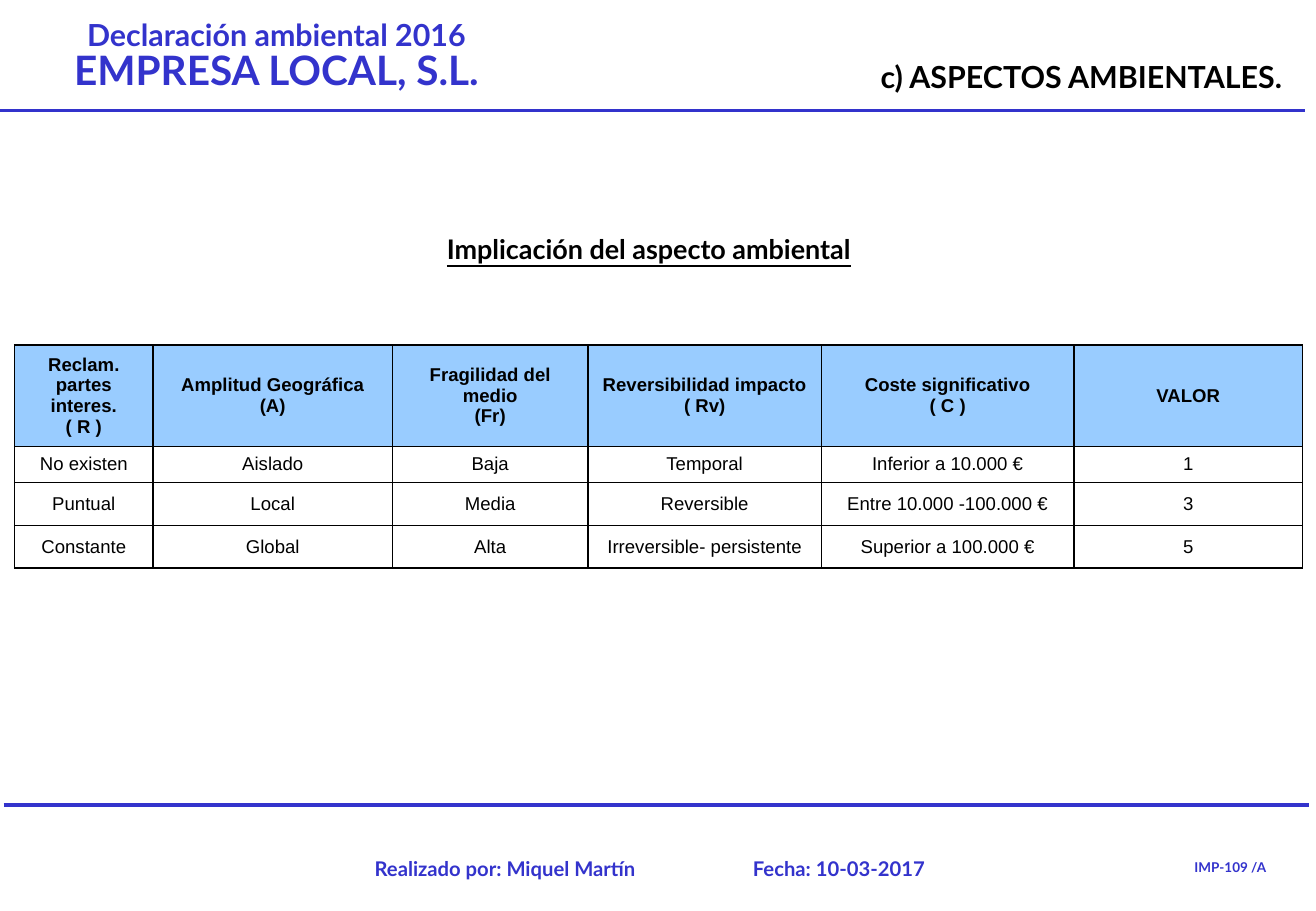
from dataclasses import dataclass

import lxml.etree
import pptx
import pptx.dml.color
import pptx.enum.shapes
import pptx.enum.text
import pptx.oxml.ns
import pptx.util

ALIGN = pptx.enum.text.PP_ALIGN
ANCHOR = pptx.enum.text.MSO_ANCHOR
EMU_PER_PX = 9144  # 100 px to the inch

BLUE = "3333CC"
BLACK = "000000"
WHITE = "FFFFFF"
HEADER_FILL = "99CCFF"


@dataclass(frozen=True)
class Line:
    text: str
    size: int


@dataclass(frozen=True)
class Label:
    left: int
    top: int
    width: int
    height: int
    lines: tuple[Line, ...]
    align: ALIGN
    color: str = BLUE
    underline: bool = False
    anchor: ANCHOR = ANCHOR.TOP
    line_spacing: float = 1.0


@dataclass(frozen=True)
class Rule:
    left: int
    top: int
    width: int


RULES = (Rule(0, 91, 1074), Rule(3, 663, 1074))

LABELS = (
    Label(8, 13, 439, 70,
          (Line("Declaración ambiental 2016", 18), Line("EMPRESA LOCAL, S.L.", 24)),
          ALIGN.CENTER, line_spacing=0.85),
    Label(283, 700, 250, 25, (Line("Realizado por: Miquel Martín", 12),), ALIGN.RIGHT),
    Label(592, 700, 179, 25, (Line("Fecha: 10-03-2017", 12),), ALIGN.RIGHT),
    Label(950, 702, 125, 25, (Line("IMP-109 /A", 8),), ALIGN.CENTER),
    Label(481, 43, 584, 40, (Line("c) ASPECTOS AMBIENTALES.", 18),), ALIGN.RIGHT, BLACK),
    Label(337, 186, 394, 37, (Line("Implicación del aspecto ambiental", 16),),
          ALIGN.CENTER, BLACK, underline=True, anchor=ANCHOR.MIDDLE),
)

TABLE_LEFT, TABLE_TOP = 12, 284
COLUMN_WIDTHS = (114, 197, 161, 192, 208, 188)
ROW_HEIGHTS = (83, 30, 35, 35)
TABLE_ROWS = (
    ("Reclam. partes interes.\n( R )", "Amplitud Geográfica\n(A)", "Fragilidad del medio\n(Fr)",
     "Reversibilidad impacto\n( Rv)", "Coste significativo\n( C )", "VALOR"),
    ("No existen", "Aislado", "Baja", "Temporal", "Inferior a 10.000 €", "1"),
    ("Puntual", "Local", "Media", "Reversible", "Entre 10.000 -100.000 €", "3"),
    ("Constante", "Global", "Alta", "Irreversible- persistente", "Superior a 100.000 €", "5"),
)


def px(length: int) -> pptx.util.Emu:
    return pptx.util.Emu(length * EMU_PER_PX)


def rgb(color: str) -> pptx.dml.color.RGBColor:
    return pptx.dml.color.RGBColor.from_string(color)


def add_child(parent, tag: str, **attributes: str):
    return lxml.etree.SubElement(parent, pptx.oxml.ns.qn(tag), attributes)


def set_font(para, name: str, size: int, color: str, bold: bool) -> None:
    para.font.name = name
    para.font.size = pptx.util.Pt(size)
    para.font.bold = bold
    para.font.color.rgb = rgb(color)


def draw_rule(page, rule: Rule) -> None:
    connector = page.shapes.add_connector(
        pptx.enum.shapes.MSO_CONNECTOR.STRAIGHT,
        px(rule.left), px(rule.top), px(rule.left + rule.width), px(rule.top))
    connector.line.color.rgb = rgb(BLUE)
    connector.line.width = pptx.util.Pt(2.25)
    add_child(connector.element.spPr, "a:effectLst")


def draw_label(page, label: Label) -> None:
    box = page.shapes.add_textbox(
        px(label.left), px(label.top), px(label.width), px(label.height))
    frame = box.text_frame
    frame.word_wrap = True
    frame.vertical_anchor = label.anchor
    for index, line in enumerate(label.lines):
        para = frame.add_paragraph() if index else frame.paragraphs[0]
        para.text = line.text
        para.alignment = label.align
        para.line_spacing = label.line_spacing
        set_font(para, "Lato", line.size, label.color, bold=True)
        para.font.underline = label.underline


def add_borders(cell) -> None:
    """Draw a 1 pt black line on all four sides; call before setting the fill."""
    properties = cell._tc.get_or_add_tcPr()
    for side in ("a:lnL", "a:lnR", "a:lnT", "a:lnB"):
        border = add_child(properties, side, w=str(pptx.util.Pt(1)))
        add_child(add_child(border, "a:solidFill"), "a:srgbClr", val=BLACK)


def draw_cell(cell, text: str, is_header: bool) -> None:
    add_borders(cell)
    cell.fill.solid()
    cell.fill.fore_color.rgb = rgb(HEADER_FILL if is_header else WHITE)
    cell.vertical_anchor = ANCHOR.MIDDLE
    para = cell.text_frame.paragraphs[0]
    para.text = text
    para.alignment = ALIGN.CENTER
    set_font(para, "Arial", 11, BLACK, bold=is_header)


def draw_table(page) -> None:
    table = page.shapes.add_table(
        len(ROW_HEIGHTS), len(COLUMN_WIDTHS), px(TABLE_LEFT), px(TABLE_TOP),
        px(sum(COLUMN_WIDTHS)), px(sum(ROW_HEIGHTS))).table
    table.first_row = False
    table.horz_banding = False
    for column, width in zip(table.columns, COLUMN_WIDTHS):
        column.width = px(width)
    for row_index, (row, height) in enumerate(zip(table.rows, ROW_HEIGHTS)):
        row.height = px(height)
        for cell, text in zip(row.cells, TABLE_ROWS[row_index]):
            draw_cell(cell, text, is_header=row_index == 0)


def main() -> None:
    deck = pptx.Presentation()
    deck.slide_width, deck.slide_height = px(1083), px(750)
    page = deck.slides.add_slide(deck.slide_layouts[6])
    for rule in RULES:
        draw_rule(page, rule)
    for label in LABELS:
        draw_label(page, label)
    draw_table(page)
    deck.save("out.pptx")


if __name__ == "__main__":
    main()
